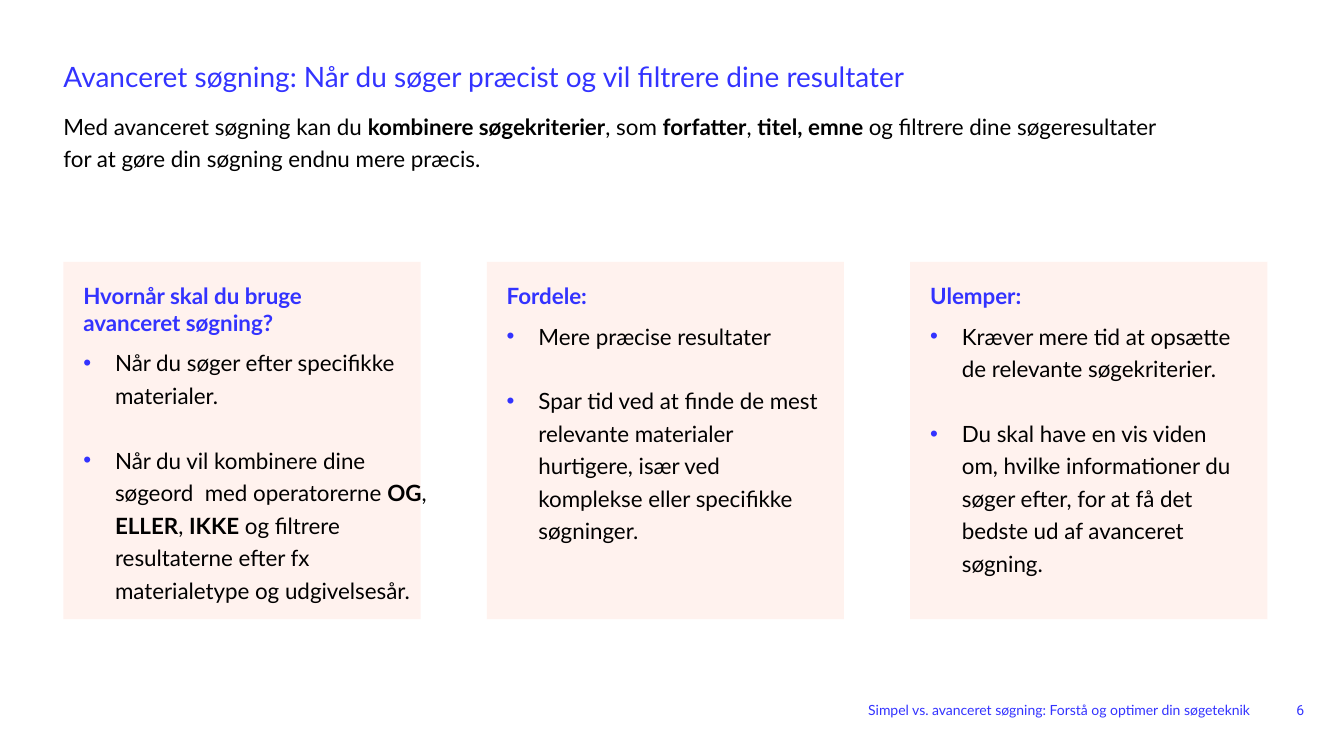
import lxml.etree
import pptx
import pptx.dml.color
import pptx.enum.shapes
import pptx.enum.text
import pptx.oxml.ns
import pptx.util

Cm = pptx.util.Cm
Pt = pptx.util.Pt
Anchor = pptx.enum.text.MSO_ANCHOR
Align = pptx.enum.text.PP_ALIGN
qn = pptx.oxml.ns.qn

BLUE = pptx.dml.color.RGBColor(0x33, 0x33, 0xFF)
BLACK = pptx.dml.color.RGBColor(0, 0, 0)
PEACH = pptx.dml.color.RGBColor(0xFF, 0xE6, 0xDF)

# Bold stretches stand between double asterisks.
TITLE = "Avanceret søgning: Når du søger præcist og vil filtrere dine resultater"
INTRO = (
    "Med avanceret søgning kan du **kombinere søgekriterier**, som **forfatter**, "
    "**titel, emne **og filtrere dine søgeresultater\n"
    "for at gøre din søgning endnu mere præcis."
)
CARDS = [
    ("Hvornår skal du bruge \navanceret søgning?", [
        "Når du søger efter specifikke materialer.",
        "Når du vil kombinere dine søgeord  med operatorerne **OG**, **ELLER**, **IKKE** "
        "og filtrere resultaterne efter fx materialetype og udgivelsesår.",
    ]),
    ("Fordele:", [
        "Mere præcise resultater",
        "Spar tid ved at finde de mest relevante materialer hurtigere, "
        "især ved komplekse eller specifikke søgninger.",
    ]),
    ("Ulemper:", [
        "Kræver mere tid at opsætte de relevante søgekriterier.",
        "Du skal have en vis viden om, hvilke informationer du søger efter, "
        "for at få det bedste ud af avanceret søgning.",
    ]),
]
FOOTER = "Simpel vs. avanceret søgning: Forstå og optimer din søgeteknik"
PAGE_NUMBER = "6"

MARGIN = Cm(1.6)
CONTENT_WIDTH = Cm(30.3)
CARD_TOP = Cm(6.6)
CARD_SIZE = Cm(9)
CARD_STEP = Cm(10.67)
CARD_INSET = Cm(0.5)
FIRST_TEXT_WIDTH = Cm(9.68)
BULLET_INDENT = Cm(0.8)
LINE = Pt(23.2)


def place(shape, left, top, width, height, inset=None, anchor=Anchor.TOP):
    """Position a text shape and return its text frame."""
    shape.left, shape.top, shape.width, shape.height = left, top, width, height
    frame = shape.text_frame
    frame.word_wrap = True
    frame.auto_size = pptx.enum.text.MSO_AUTO_SIZE.NONE
    frame.vertical_anchor = anchor
    if inset is not None:
        frame.margin_left = frame.margin_right = inset
        frame.margin_top = frame.margin_bottom = inset
    return frame


def set_bullet(paragraph, bullet):
    properties = paragraph._p.get_or_add_pPr()
    indent = BULLET_INDENT if bullet else 0
    properties.set("marL", str(int(indent)))
    properties.set("indent", str(-int(indent)))
    if not bullet:
        lxml.etree.SubElement(properties, qn("a:buNone"))
        return
    color = lxml.etree.SubElement(properties, qn("a:buClr"))
    lxml.etree.SubElement(color, qn("a:srgbClr"), val=str(BLUE))
    lxml.etree.SubElement(properties, qn("a:buFont"), typeface="Arial")
    lxml.etree.SubElement(properties, qn("a:buChar"), char="•")


def write(frame, text, first=False, size=16, color=BLACK, font="Lato", bold=False,
          bullet=False, align=Align.LEFT, line=1.0, before=0, after=0):
    paragraph = frame.paragraphs[0] if first else frame.add_paragraph()
    set_bullet(paragraph, bullet)
    paragraph.alignment = align
    paragraph.line_spacing = line
    paragraph.space_before, paragraph.space_after = Pt(before), Pt(after)
    for part_index, part in enumerate(text.split("**")):
        for line_index, words in enumerate(part.split("\n")):
            if line_index:
                paragraph.add_line_break()
            if not words:
                continue
            run = paragraph.add_run()
            run.text = words
            run.font.name, run.font.size = font, Pt(size)
            run.font.bold = bold or part_index % 2 == 1
            run.font.color.rgb = color


def add_card(slide, left):
    """Add a half-transparent square behind the placeholders."""
    card = slide.shapes.add_shape(
        pptx.enum.shapes.MSO_SHAPE.RECTANGLE, left, CARD_TOP, CARD_SIZE, CARD_SIZE)
    card.shadow.inherit = False
    card.fill.solid()
    card.fill.fore_color.rgb = PEACH
    fill_color = card._element.spPr.find(qn("a:solidFill"))[0]
    lxml.etree.SubElement(fill_color, qn("a:alpha"), val="50000")
    card.line.fill.background()
    slide.shapes.title._element.addprevious(card._element)


def main():
    presentation = pptx.Presentation()
    presentation.slide_width, presentation.slide_height = Cm(33.87), Cm(19.05)
    comparison_layout = presentation.slide_layouts[4]
    slide = presentation.slides.add_slide(comparison_layout)
    title, intro, *lists = slide.placeholders

    frame = place(title, MARGIN, MARGIN, CONTENT_WIDTH, Cm(0.8), inset=0)
    write(frame, TITLE, first=True, size=20, color=BLUE, line=0.9)
    frame = place(intro, MARGIN, Cm(2.71), CONTENT_WIDTH, Cm(1.7), inset=0)
    write(frame, INTRO, first=True, line=LINE)

    for index, (placeholder, (heading, points)) in enumerate(zip(lists, CARDS)):
        left = MARGIN + index * CARD_STEP
        add_card(slide, left)
        width = CARD_SIZE if index else FIRST_TEXT_WIDTH
        frame = place(placeholder, left, CARD_TOP, width, CARD_SIZE, inset=CARD_INSET)
        write(frame, heading, first=True, color=BLUE, bold=True, after=6)
        for point_index, point in enumerate(points):
            write(frame, point, bullet=True, line=LINE,
                  before=LINE.pt if point_index else 0)

    for text, font, left, width in [
        (FOOTER, "Lato", Cm(21.21), Cm(10.54)),
        (PAGE_NUMBER, "Roboto", Cm(25.5), Cm(7.62)),
    ]:
        position = left, Cm(17.38), width, Cm(1.02)
        box = slide.shapes.add_textbox(*position)
        frame = place(box, *position, anchor=Anchor.MIDDLE)
        write(frame, text, first=True, size=10, color=BLUE, font=font, align=Align.RIGHT)

    presentation.save("out.pptx")


if __name__ == "__main__":
    main()
